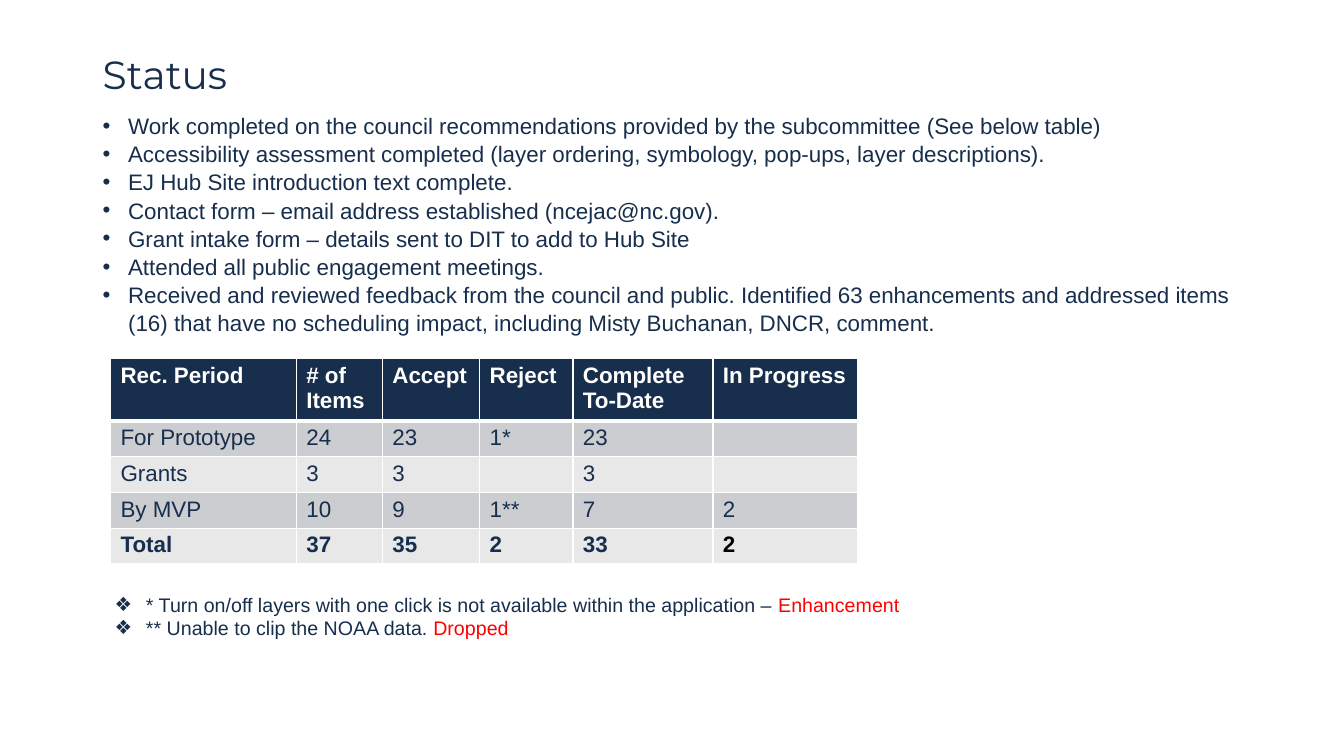
from lxml import etree
from pptx import Presentation
from pptx import util as u
from pptx.dml.color import RGBColor
from pptx.enum import text
from pptx.oxml import ns

NAVY = RGBColor(0x17, 0x2E, 0x4C)
WHITE = RGBColor(0xFF, 0xFF, 0xFF)
BLACK = RGBColor(0, 0, 0)
RED = RGBColor(0xFF, 0, 0)
DARK = RGBColor(0xCC, 0xCD, 0xD0)
LIGHT = RGBColor(0xE8, 0xE8, 0xE9)


def write(para, words, tint, size, face="Arial", bold=False):
    run = para.add_run()
    run.text = words
    look = {"name": face, "size": u.Pt(size), "bold": bold}
    for key, val in look.items():
        setattr(run.font, key, val)
    run.font.color.rgb = tint


def listing(box, lines, mark, dent, size, space):
    frame = box.text_frame
    frame.word_wrap = True
    for i, parts in enumerate(lines):
        para = frame.paragraphs[0] if i == 0 else frame.add_paragraph()
        prop = para._p.get_or_add_pPr()
        prop.set("marL", str(u.Cm(dent)))
        prop.set("indent", str(-u.Cm(dent)))
        font = etree.SubElement(prop, ns.qn("a:buFont"))
        font.set("typeface", "Arial")
        char = etree.SubElement(prop, ns.qn("a:buChar"))
        char.set("char", mark)
        para.line_spacing = space
        for words, tint in parts:
            write(para, words, tint, size)


deck = Presentation()
deck.slide_width = u.Cm(33.87)
deck.slide_height = u.Cm(19.05)
slide = deck.slides.add_slide(deck.slide_layouts[6])

title = slide.shapes.add_textbox(u.Cm(2.34), u.Cm(1.27), u.Cm(29.2), u.Cm(1.55))
title.text_frame.word_wrap = True
head = title.text_frame.paragraphs[0]
head.line_spacing = 0.9
write(head, "Status", NAVY, 28, "Montserrat")

points = [
    "Work completed on the council recommendations provided by the subcommittee (See below table)",
    "Accessibility assessment completed (layer ordering, symbology, pop-ups, layer descriptions).",
    "EJ Hub Site introduction text complete.",
    "Contact form – email address established (ncejac@nc.gov).",
    "Grant intake form – details sent to DIT to add to Hub Site",
    "Attended all public engagement meetings.",
    "Received and reviewed feedback from the council and public. Identified 63 enhancements "
    "and addressed items (16) that have no scheduling impact, including Misty Buchanan, DNCR, comment.",
]
body = slide.shapes.add_textbox(u.Cm(2.34), u.Cm(2.67), u.Cm(28.96), u.Cm(14.91))
listing(body, [[(point, NAVY)] for point in points], "•", 0.64, 16, 1.05)

rows = [
    ["Rec. Period", "# of Items", "Accept", "Reject", "Complete To-Date", "In Progress"],
    ["For Prototype", "24", "23", "1*", "23", ""],
    ["Grants", "3", "3", "", "3", ""],
    ["By MVP", "10", "9", "1**", "7", "2"],
    ["Total", "37", "35", "2", "33", "2"],
]
widths = [4.68, 2.17, 2.45, 2.35, 3.53, 3.63]
last = len(rows) - 1
grid = slide.shapes.add_table(
    len(rows), len(widths), u.Cm(2.79), u.Cm(9.04), u.Cm(sum(widths)), u.Cm(5)).table
for col, width in zip(grid.columns, widths):
    col.width = u.Cm(width)
pads = {"margin_left": 0.25, "margin_right": 0.25, "margin_top": 0.11, "margin_bottom": 0.11}
for r, row in enumerate(rows):
    grid.rows[r].height = u.Cm(1.5 if r == 0 else 0.88)
    for c, words in enumerate(row):
        cell = grid.cell(r, c)
        for key, val in pads.items():
            setattr(cell, key, u.Cm(val))
        prop = cell._tc.get_or_add_tcPr()
        for side in "LRTB":
            thick = (r, side) in [(0, "B"), (1, "T")]
            line = etree.SubElement(prop, ns.qn("a:ln" + side))
            line.set("w", str(u.Pt(3 if thick else 1)))
            fill = etree.SubElement(line, ns.qn("a:solidFill"))
            etree.SubElement(fill, ns.qn("a:srgbClr")).set("val", str(WHITE))
        cell.fill.solid()
        cell.fill.fore_color.rgb = NAVY if r == 0 else DARK if r % 2 else LIGHT
        para = cell.text_frame.paragraphs[0]
        if words:
            final = r == last and c == len(row) - 1
            tint = WHITE if r == 0 else BLACK if final else NAVY
            write(para, words, tint, 16, bold=r in (0, last))
        else:
            etree.SubElement(para._p, ns.qn("a:endParaRPr")).set("sz", "1600")

notes = [
    [("* Turn on/off layers with one click is not available within the application – ", NAVY),
     ("Enhancement", RED)],
    [("** Unable to clip the NOAA data. ", NAVY), ("Dropped", RED)],
]
foot = slide.shapes.add_textbox(u.Cm(2.64), u.Cm(14.81), u.Cm(22.17), u.Cm(1.45))
foot.text_frame.auto_size = text.MSO_AUTO_SIZE.SHAPE_TO_FIT_TEXT
listing(foot, notes, "❖", 0.79, 14, 1.0)

deck.save("out.pptx")
